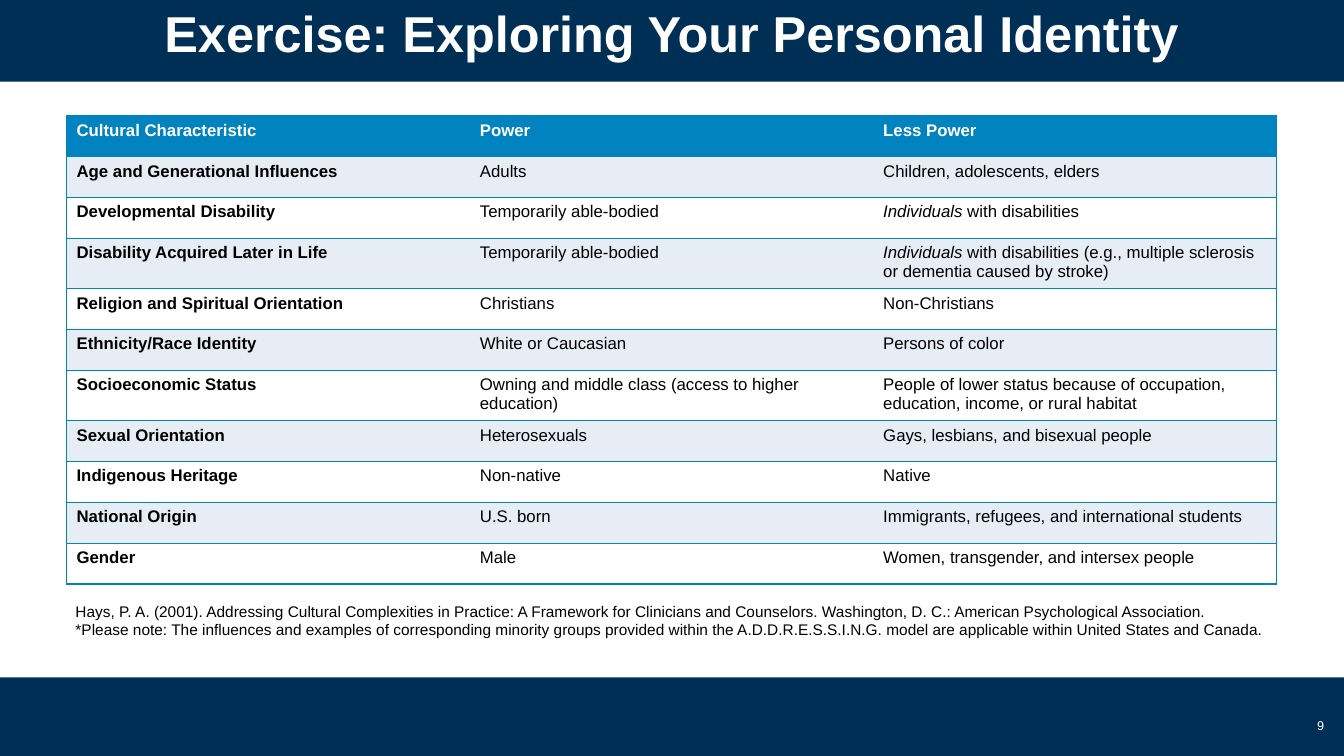
import pptx
import pptx.dml.color
import pptx.enum.shapes
import pptx.enum.text
import pptx.oxml
import pptx.oxml.ns
import pptx.util

Inches = pptx.util.Inches
Pt = pptx.util.Pt
ALIGN = pptx.enum.text.PP_ALIGN
ANCHOR = pptx.enum.text.MSO_ANCHOR

NAVY, BLUE, PALE, WHITE, BLACK = "002F56", "0083BE", "E7EDF4", "FFFFFF", "000000"
ROWS = [
    ("Cultural Characteristic", "Power", "Less Power"),
    ("Age and Generational Influences", "Adults", "Children, adolescents, elders"),
    ("Developmental Disability", "Temporarily able-bodied", "Individuals with disabilities"),
    ("Disability Acquired Later in Life", "Temporarily able-bodied",
     "Individuals with disabilities (e.g., multiple sclerosis or dementia caused by stroke)"),
    ("Religion and Spiritual Orientation", "Christians", "Non-Christians"),
    ("Ethnicity/Race Identity", "White or Caucasian", "Persons of color"),
    ("Socioeconomic Status", "Owning and middle class (access to higher education)",
     "People of lower status because of occupation, education, income, or rural habitat"),
    ("Sexual Orientation", "Heterosexuals", "Gays, lesbians, and bisexual people"),
    ("Indigenous Heritage", "Non-native", "Native"),
    ("National Origin", "U.S. born", "Immigrants, refugees, and international students"),
    ("Gender", "Male", "Women, transgender, and intersex people"),
]
NOTES = [
    "Hays, P. A. (2001). Addressing Cultural Complexities in Practice: A Framework for "
    "Clinicians and Counselors. Washington, D. C.: American Psychological Association.",
    "*Please note: The influences and examples of corresponding minority groups provided within "
    "the A.D.D.R.E.S.S.I.N.G. model are applicable within United States and Canada.",
]
ITALIC_WORD = "Individuals"


def rgb(color):
    """Turn a hex string into a colour."""
    return pptx.dml.color.RGBColor.from_string(color)


def style_run(r, size, color, bold=False):
    """Set the font of a run."""
    r.font.name = "Arial"
    r.font.size = Pt(size)
    r.font.bold = bold
    r.font.color.rgb = rgb(color)


def add_band(s, x, y, w, h):
    """Draw a navy band across the box."""
    sp = s.shapes.add_shape(pptx.enum.shapes.MSO_SHAPE.RECTANGLE,
                            Inches(x), Inches(y), Inches(w), Inches(h))
    sp.shadow.inherit = False
    sp.fill.solid()
    sp.fill.fore_color.rgb = rgb(NAVY)
    sp.line.fill.background()


def add_text(s, x, y, w, h, lines, size, color, bold=False,
             align=ALIGN.LEFT, anchor=ANCHOR.TOP):
    """Write one paragraph per line into the box."""
    sp = s.shapes.add_textbox(Inches(x), Inches(y), Inches(w), Inches(h))
    tf = sp.text_frame
    tf.word_wrap = True
    tf.vertical_anchor = anchor
    tf.text = "\n".join(lines)
    for p in tf.paragraphs:
        p.alignment = align
        for r in p.runs:
            style_run(r, size, color, bold)


def set_borders(cell, sides):
    """Rule the named sides of a cell and clear the others."""
    tc_pr = cell._tc.get_or_add_tcPr()
    for i, side in enumerate("LRTB"):
        paint = f'<a:solidFill><a:srgbClr val="{BLUE}"/></a:solidFill>' if side in sides else "<a:noFill/>"
        ln = f'<a:ln{side} {pptx.oxml.ns.nsdecls("a")} w="{Pt(1)}">{paint}</a:ln{side}>'
        tc_pr.insert(i, pptx.oxml.parse_xml(ln))


def fill_cell(cell, text, fill, color, bold):
    """Fill a cell and write its text, with the stressed word in italics."""
    cell.fill.solid()
    cell.fill.fore_color.rgb = rgb(fill)
    p = cell.text_frame.paragraphs[0]
    stressed = ITALIC_WORD if text.startswith(ITALIC_WORD) else ""
    for part in filter(None, (stressed, text[len(stressed):])):
        r = p.add_run()
        r.text = part
        style_run(r, 12, color, bold)
        r.font.italic = part == ITALIC_WORD


def add_identity_table(s, x, y, w, row_h):
    """Build the table of cultural characteristics."""
    n_rows, n_cols = len(ROWS), len(ROWS[0])
    table = s.shapes.add_table(n_rows, n_cols, Inches(x), Inches(y),
                               Inches(w), Inches(row_h * n_rows)).table
    for col in table.columns:
        col.width = Inches(w / n_cols)
    for i, texts in enumerate(ROWS):
        table.rows[i].height = Inches(row_h)
        header = i == 0
        fill = BLUE if header else PALE if i % 2 else WHITE
        for j, text in enumerate(texts):
            cell = table.cell(i, j)
            fill_cell(cell, text, fill, WHITE if header else BLACK, header or j == 0)
            set_borders(cell, "TB" + ("L" if j == 0 else "") + ("R" if j == n_cols - 1 else ""))


def add_header(s, x, y, w, h):
    """Draw the top band with the slide title."""
    add_band(s, x, y, w, h)
    add_text(s, x, y - 0.08, w, h - 0.01, ["Exercise: Exploring Your Personal Identity"],
             36, WHITE, True, ALIGN.CENTER, ANCHOR.MIDDLE)


def add_footer(s, x, y, w, h):
    """Draw the bottom band with the slide number."""
    add_band(s, x, y, w, h)
    add_text(s, x + w - 3.21, y + 0.28, 3.11, 0.4, ["9"], 9, WHITE,
             align=ALIGN.RIGHT, anchor=ANCHOR.MIDDLE)


def main():
    """Build the slide and save it."""
    prs = pptx.Presentation()
    prs.slide_width, prs.slide_height = Inches(13.33), Inches(7.5)
    s = prs.slides.add_slide(prs.slide_layouts[6])
    add_header(s, 0, 0, 13.33, 0.81)
    add_identity_table(s, 0.66, 1.15, 12, 0.405)
    add_text(s, 0.65, 5.92, 12.01, 0.47, NOTES, 11, BLACK)
    add_footer(s, 0, 6.72, 13.33, 0.78)
    prs.save("out.pptx")


if __name__ == "__main__":
    main()
